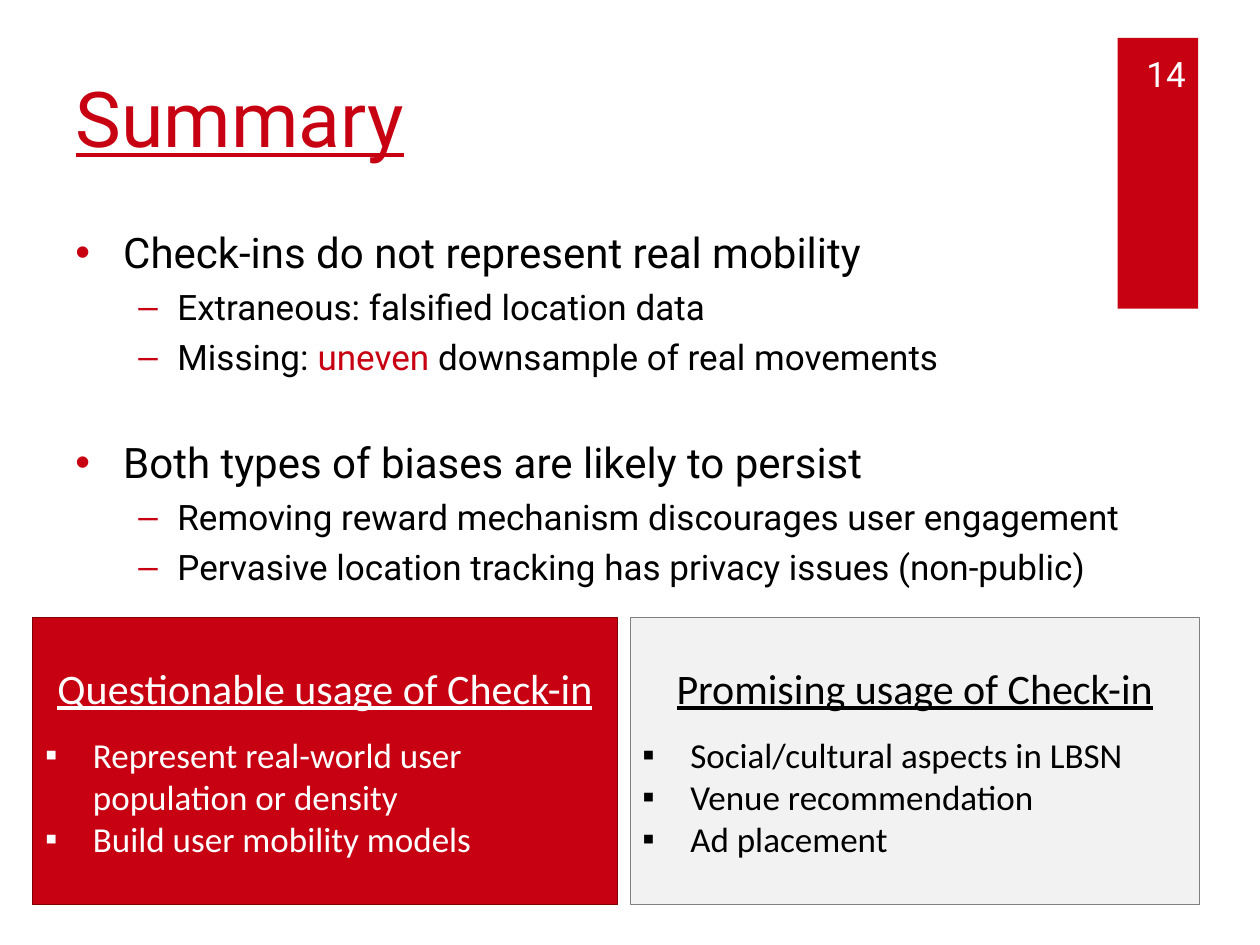
from collections import namedtuple
from lxml.etree import SubElement
from pptx import Presentation
from pptx.dml.color import RGBColor
from pptx.enum.shapes import MSO_SHAPE
from pptx.enum.text import MSO_ANCHOR, PP_ALIGN
from pptx.oxml.ns import qn
from pptx.util import Inches, Pt

COLORS = {
    "red": "C70012",
    "dark_red": "800000",
    "white": "FFFFFF",
    "black": "000000",
    "pale": "F2F2F2",
    "gray": "808080",
}
SLIDE_WIDTH, SLIDE_HEIGHT = Inches(10), Inches(7.5)
COLUMNS, ROWS = 100, 75
LINE_HEIGHT = 1.17
SPACE_SHARE = 0.2

Box = namedtuple("Box", "left top width height")
Level = namedtuple("Level", "size mark margin indent")
LEVELS = [Level(24, "•", 0.38, 0.38), Level(20, "–", 0.81, 0.31)]

FINDINGS = [
    ([("Check-ins do not represent real mobility", "black")], [
        [("Extraneous: falsified location data", "black")],
        [("Missing: ", "black"), ("uneven", "red"), (" downsample of real movements", "black")],
    ]),
    ([("Both types of biases are likely to persist", "black")], [
        [("Removing reward mechanism discourages user engagement", "black")],
        [("Pervasive location tracking has privacy issues (non-public)", "black")],
    ]),
]


def rgb(name):
    return RGBColor.from_string(COLORS[name])


def place(box):
    column, row = SLIDE_WIDTH / COLUMNS, SLIDE_HEIGHT / ROWS
    return [round(value) for value in (
        box.left * column, box.top * row, box.width * column, box.height * row)]


def add_span(para, text, size, color, font="Roboto", underline=None):
    span = para.add_run()
    span.text = text
    span.font.name = font
    span.font.size = Pt(size)
    span.font.color.rgb = rgb(color)
    span.font.underline = underline


def set_bullet(para, mark, margin, indent, color):
    properties = para._p.get_or_add_pPr()
    properties.set("marL", str(Inches(margin)))
    properties.set("indent", str(-Inches(indent)))
    tint = SubElement(properties, qn("a:buClr"))
    SubElement(tint, qn("a:srgbClr"), val=COLORS[color])
    SubElement(properties, qn("a:buFont"), typeface="Arial")
    SubElement(properties, qn("a:buChar"), char=mark)


def next_para(frame):
    return frame.add_paragraph() if frame.paragraphs[0].runs else frame.paragraphs[0]


def add_rectangle(page, box, fill, line=None):
    shape = page.shapes.add_shape(MSO_SHAPE.RECTANGLE, *place(box))
    shape.shadow.inherit = False
    shape.fill.solid()
    shape.fill.fore_color.rgb = rgb(fill)
    if line:
        shape.line.color.rgb = rgb(line)
        shape.line.width = Pt(0.25)
    else:
        shape.line.fill.background()
    return shape


def add_text_frame(page, box):
    frame = page.shapes.add_textbox(*place(box)).text_frame
    frame.word_wrap = True
    return frame


def add_title(page, box, text):
    title = page.shapes.title
    title.left, title.top, title.width, title.height = place(box)
    title.text_frame.vertical_anchor = MSO_ANCHOR.MIDDLE
    para = title.text_frame.paragraphs[0]
    para.alignment = PP_ALIGN.LEFT
    add_span(para, text, 44, "red", underline=True)


def add_page_tab(page, box, number):
    add_rectangle(page, box, "red")
    frame = add_text_frame(page, Box(box.left, box.top + 0.8, box.width, 4))
    frame.vertical_anchor = MSO_ANCHOR.MIDDLE
    para = frame.paragraphs[0]
    para.alignment = PP_ALIGN.RIGHT
    add_span(para, number, 20, "white")


def add_finding(frame, depth, spans, gap=0):
    level = LEVELS[depth]
    para = next_para(frame)
    para.level = depth
    para.space_before = Pt(level.size * LINE_HEIGHT * SPACE_SHARE + gap)
    set_bullet(para, level.mark, level.margin, level.indent, "red")
    for text, color in spans:
        add_span(para, text, level.size, color)


def add_findings(page, box, findings):
    frame = add_text_frame(page, box)
    group_gap = LEVELS[1].size * LINE_HEIGHT * (1 + SPACE_SHARE)
    for index, (heading, details) in enumerate(findings):
        add_finding(frame, 0, heading, group_gap if index else 0)
        for spans in details:
            add_finding(frame, 1, spans)


def add_usage_panel(page, box, heading, items, fill, line, ink):
    frame = add_rectangle(page, box, fill, line).text_frame
    frame.word_wrap = True
    frame.vertical_anchor = MSO_ANCHOR.MIDDLE
    para = frame.paragraphs[0]
    para.alignment = PP_ALIGN.CENTER
    para.space_after = Pt(12.2)
    add_span(para, heading, 24, ink, "Calibri", True)
    for item in items:
        para = next_para(frame)
        para.alignment = PP_ALIGN.LEFT
        set_bullet(para, "▪", 0.38, 0.38, ink)
        add_span(para, item, 20, ink, "Calibri")


def build_summary(deck):
    page = deck.slides.add_slide(deck.slide_layouts.get_by_name("Title Only"))
    add_page_tab(page, Box(88.7, 3, 6.4, 21.5), "14")
    add_title(page, Box(5, 3, 80.6, 12.5), "Summary")
    add_findings(page, Box(5, 17.5, 90, 52), FINDINGS)
    add_usage_panel(
        page, Box(50, 49, 45.2, 22.8), "Promising usage of Check-in",
        ["Social/cultural aspects in LBSN", "Venue recommendation", "Ad placement"],
        "pale", "gray", "black")
    add_usage_panel(
        page, Box(2.6, 49, 46.4, 22.8), "Questionable usage of Check-in",
        ["Represent real-world user population or density", "Build user mobility models"],
        "red", "dark_red", "white")


def main():
    deck = Presentation()
    deck.slide_width, deck.slide_height = SLIDE_WIDTH, SLIDE_HEIGHT
    build_summary(deck)
    deck.save("out.pptx")


if __name__ == "__main__":
    main()
